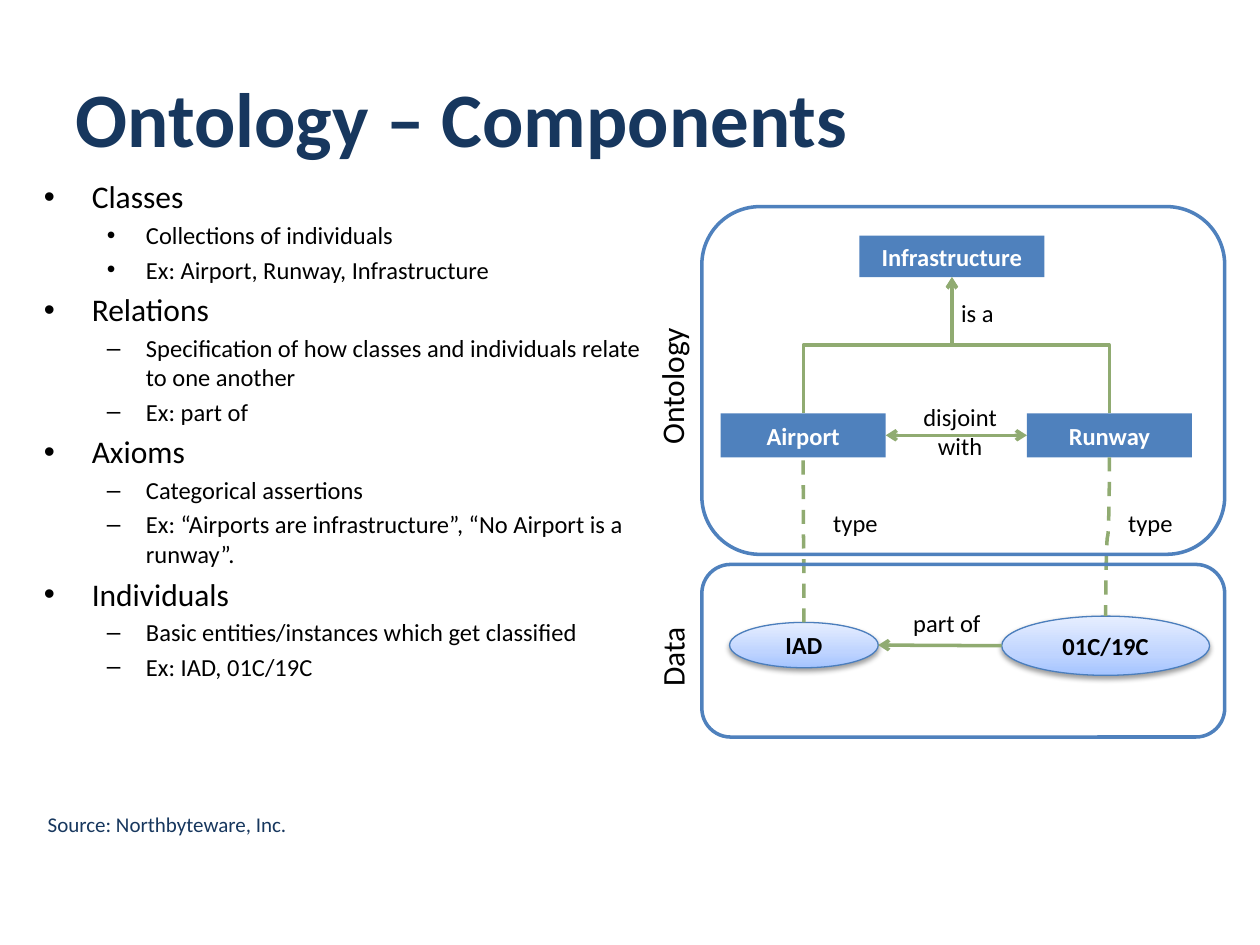
import pptx
import pptx.util
from lxml import etree
from pptx.dml.color import RGBColor
from pptx.enum.dml import MSO_LINE
from pptx.enum.shapes import MSO_CONNECTOR, MSO_SHAPE
from pptx.enum.text import MSO_ANCHOR, PP_ALIGN
from pptx.oxml import parse_xml
from pptx.oxml.ns import qn
from pptx.util import Inches, Pt

NAVY = RGBColor(0x17, 0x37, 0x5E)
BLUE = RGBColor(0x4F, 0x81, 0xBD)
EDGE = RGBColor(0x4B, 0x7E, 0xBC)
GREEN = RGBColor(0x90, 0xAB, 0x71)
BLACK = RGBColor(0, 0, 0)
WHITE = RGBColor(0xFF, 0xFF, 0xFF)
FONT = "Calibri"
NS = 'xmlns:a="http://schemas.openxmlformats.org/drawingml/2006/main"'

TITLE = "Ontology – Components"
SOURCE = "Source: Northbyteware, Inc."
# heading, bullet of its points, points
TOPICS = [
    ("Classes", "•", ["Collections of individuals",
                      "Ex: Airport, Runway, Infrastructure"]),
    ("Relations", "–", ["Specification of how classes and individuals relate to one another",
                        "Ex: part of"]),
    ("Axioms", "–", ["Categorical assertions",
                     "Ex: “Airports are infrastructure”, “No Airport is a runway”."]),
    ("Individuals", "–", ["Basic entities/instances which get classified",
                          "Ex: IAD, 01C/19C"]),
]
# name: left, top, width, height
CLASSES = {
    "Airport": (5.72, 3.28, 1.31, 0.35),
    "Runway": (8.15, 3.28, 1.31, 0.35),
    "Infrastructure": (6.82, 1.87, 1.47, 0.33),
}
INDIVIDUALS = {
    "IAD": (5.79, 4.94, 1.18, 0.36),
    "01C/19C": (7.95, 4.89, 1.65, 0.47),
}
# lines of text, box, alignment
RELATION_LABELS = [
    (["disjoint", "with"], (7.09, 3.14, 1.06, 0.57), PP_ALIGN.CENTER),
    (["is a"], (7.53, 2.32, 1.06, 0.34), PP_ALIGN.LEFT),
    (["type"], (6.26, 3.98, 1.06, 0.34), PP_ALIGN.CENTER),
    (["type"], (8.6, 3.98, 1.06, 0.34), PP_ALIGN.CENTER),
    (["part of"], (6.71, 4.78, 1.61, 0.34), PP_ALIGN.CENTER),
]
FRAMES = [(5.57, 1.64, 4.15, 2.76), (5.57, 4.48, 4.15, 1.37)]
FRAME_LABELS = [("Ontology", (4.02, 2.86, 2.63, 0.41)),
                ("Data", (4.67, 5.01, 1.34, 0.41))]


def inches(box):
    return [Inches(v) for v in box]


def style(p, size, color, bold=False, align=PP_ALIGN.LEFT):
    p.alignment = align
    p.font.size = Pt(size)
    p.font.name = FONT
    p.font.bold = bold
    p.font.color.rgb = color


def add_text(lines, box, size, color=BLACK, align=PP_ALIGN.LEFT):
    tb = s.shapes.add_textbox(*inches(box))
    tf = tb.text_frame
    tf.word_wrap = True
    tf.text = "\n".join(lines)
    for p in tf.paragraphs:
        style(p, size, color, align=align)
    return tb


def add_node(kind, name, box, color):
    sp = s.shapes.add_shape(kind, *inches(box))
    sp.shadow.inherit = False
    tf = sp.text_frame
    tf.text = name
    tf.vertical_anchor = MSO_ANCHOR.MIDDLE
    style(tf.paragraphs[0], 14, color, True, PP_ALIGN.CENTER)
    return sp


def shade(sp):
    """Give an individual its pale gradient and soft shadow."""
    stops = "".join(f'<a:gs pos="{pos}"><a:srgbClr val="{rgb}"/></a:gs>' for pos, rgb in
                    [(0, "A4C4FF"), (35000, "BFD4FF"), (100000, "E6EEFF")])
    sp_pr = sp._element.spPr
    sp_pr.find(qn("a:prstGeom")).addnext(parse_xml(
        f'<a:gradFill {NS} rotWithShape="1"><a:gsLst>{stops}</a:gsLst>'
        '<a:lin ang="16200000" scaled="0"/></a:gradFill>'))
    sp_pr.find(qn("a:effectLst")).append(parse_xml(
        f'<a:outerShdw {NS} blurRad="{Pt(3.1)}" dist="{Pt(1.6)}" dir="5400000" '
        'rotWithShape="0"><a:srgbClr val="000000"><a:alpha val="38000"/></a:srgbClr>'
        '</a:outerShdw>'))


def add_link(kind, start, end, head=False, tail=False, dash=False):
    """Connect two points; bent and curved links leave and arrive vertically."""
    (x1, y1), (x2, y2) = start, end
    turned = kind != MSO_CONNECTOR.STRAIGHT
    if turned:  # lay the link out a quarter turn back, then rotate it
        cx, cy = (x1 + x2) / 2, (y1 + y2) / 2
        x1, y1, x2, y2 = cx + y1 - cy, cy - x1 + cx, cx + y2 - cy, cy - x2 + cx
    c = s.shapes.add_connector(kind, *inches((x1, y1, x2, y2)))
    sp_pr = c._element.spPr
    if turned:
        sp_pr.find(qn("a:xfrm")).set("rot", "5400000")
    c.line.color.rgb = GREEN
    c.line.width = Pt(2)
    if dash:
        c.line.dash_style = MSO_LINE.DASH
    ln = sp_pr.find(qn("a:ln"))
    for tag, wanted in (("a:headEnd", head), ("a:tailEnd", tail)):
        if wanted:
            etree.SubElement(ln, qn(tag), type="arrow")
    etree.SubElement(sp_pr, qn("a:effectLst"))


def top(box):
    return box[0] + box[2] / 2, box[1]


def bottom(box):
    return box[0] + box[2] / 2, box[1] + box[3]


def left(box):
    return box[0], box[1] + box[3] / 2


def right(box):
    return box[0] + box[2], box[1] + box[3] / 2


def add_bullet(p, char, margin, hanging):
    p_pr = p._p.get_or_add_pPr()
    p_pr.set("marL", str(Inches(margin)))
    p_pr.set("indent", str(-Inches(hanging)))
    etree.SubElement(p_pr, qn("a:buFont"), typeface="Arial")
    etree.SubElement(p_pr, qn("a:buChar"), char=char)


prs = pptx.Presentation()
prs.slide_width, prs.slide_height = Inches(10), Inches(7.5)
s = prs.slides.add_slide(prs.slide_layouts[5])

title = s.shapes.title
title.left, title.top, title.width, title.height = inches((0.5, 0.3, 9, 1.25))
title.text_frame.text = TITLE
title.text_frame.vertical_anchor = MSO_ANCHOR.MIDDLE
style(title.text_frame.paragraphs[0], 44, NAVY, True)

rows = []
for heading, mark, points in TOPICS:
    rows.append((heading, "•", 18, 0.38, 0.38))
    rows += [(point, mark, 14, 0.81, 0.31) for point in points]
body = add_text([row[0] for row in rows], (0.25, 1.36, 4.98, 5.34), 14)
for i, (p, (_, mark, size, margin, hanging)) in enumerate(zip(body.text_frame.paragraphs, rows)):
    add_bullet(p, mark, margin, hanging)
    p.font.size = Pt(size)
    p.space_before = Pt(size * 0.2 if i else 0)

for name, box in CLASSES.items():
    sp = add_node(MSO_SHAPE.RECTANGLE, name, box, WHITE)
    sp.fill.solid()
    sp.fill.fore_color.rgb = BLUE
    sp.line.fill.background()
for name, box in INDIVIDUALS.items():
    sp = add_node(MSO_SHAPE.OVAL, name, box, BLACK)
    sp.line.color.rgb = EDGE
    sp.line.width = Pt(0.75)
    shade(sp)

airport, runway, infrastructure = CLASSES.values()
iad, strip = INDIVIDUALS.values()
for box in (airport, runway):
    add_link(MSO_CONNECTOR.ELBOW, top(box), bottom(infrastructure), tail=True)
add_link(MSO_CONNECTOR.STRAIGHT, right(airport), left(runway), head=True, tail=True)
add_link(MSO_CONNECTOR.STRAIGHT, right(iad), left(strip), head=True)
add_link(MSO_CONNECTOR.CURVE, top(iad), bottom(airport), dash=True)
add_link(MSO_CONNECTOR.CURVE, bottom(runway), top(strip), dash=True)

for lines, box, align in RELATION_LABELS:
    add_text(lines, box, 14, align=align)
for box in FRAMES:
    sp = s.shapes.add_shape(MSO_SHAPE.ROUNDED_RECTANGLE, *inches(box))
    sp.shadow.inherit = False
    sp.fill.background()
    sp.line.color.rgb = BLUE
    sp.line.width = Pt(2)
for label, box in FRAME_LABELS:
    add_text([label], box, 18, align=PP_ALIGN.CENTER).rotation = 270
add_text([SOURCE], (0.28, 6.39, 4.25, 0.3), 12, NAVY)

prs.save("out.pptx")
